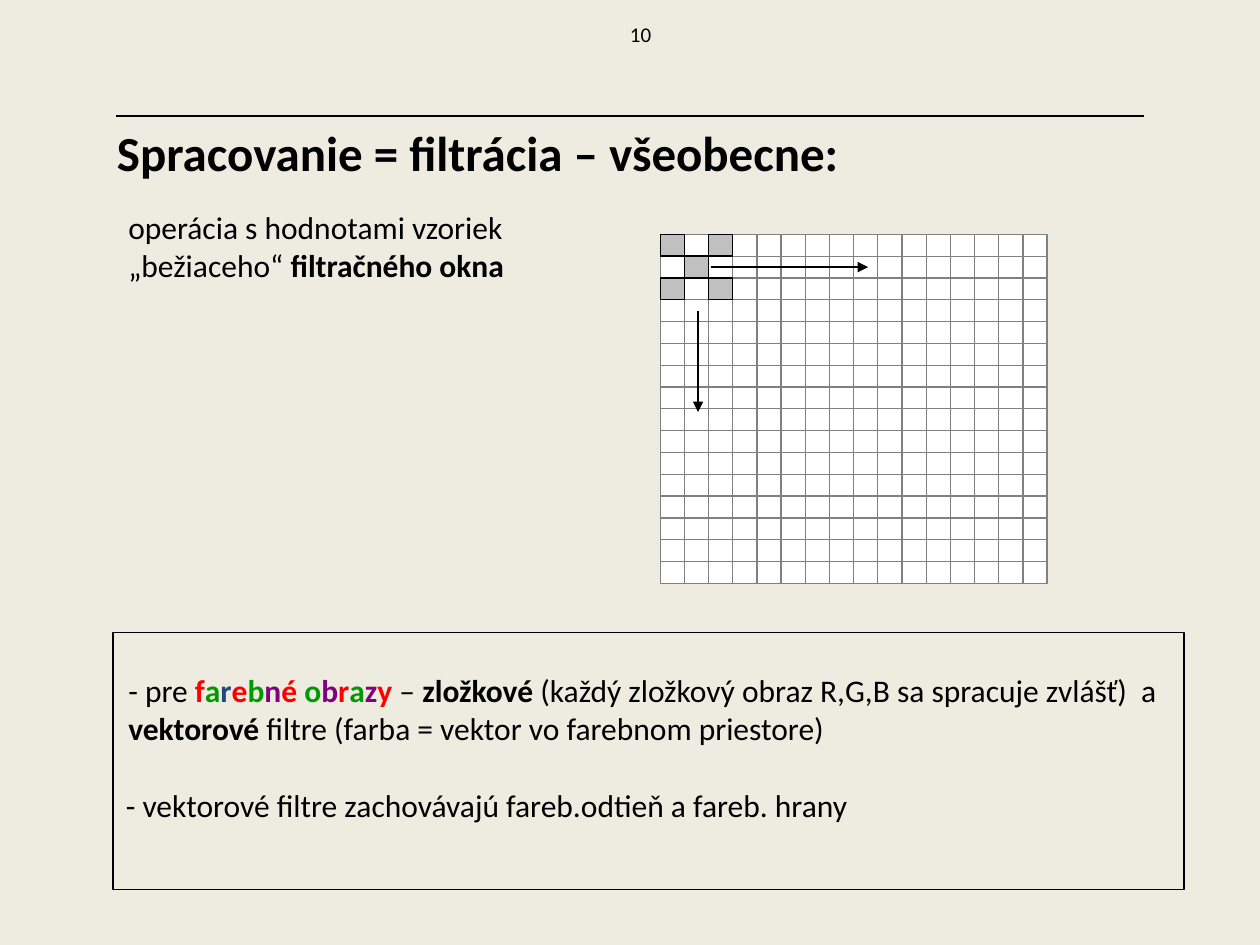
import pptx
import pptx.util
import pptx.dml.color
import pptx.enum.shapes
import pptx.enum.text
import pptx.oxml

theme = {
    "font": "Calibri", "title": 28, "body": 18, "small": 12,
    "back": "EEECE1", "ink": "000000", "white": "FFFFFF",
    "rule": "808080", "mask": "C0C0C0",
    "r": "FF0000", "g": "009900", "b": "1F497D", "p": "800080",
}

deck = pptx.Presentation()
deck.slide_width = pptx.util.Inches(10)
deck.slide_height = pptx.util.Inches(7.5)
col = deck.slide_width / 100
row = deck.slide_height / 75
page = deck.slides.add_slide(deck.slide_layouts[6])
tint = pptx.dml.color.RGBColor.from_string
rect = pptx.enum.shapes.MSO_SHAPE.RECTANGLE
page.background.fill.solid()
page.background.fill.fore_color.rgb = tint(theme["back"])


def text(runs, left, top, wide, tall, size="body", inset=1):
    box = page.shapes.add_textbox(int(left * col), int(top * row), int(wide * col), int(tall * row))
    frame = box.text_frame
    frame.word_wrap = True
    frame.auto_size = pptx.enum.text.MSO_AUTO_SIZE.SHAPE_TO_FIT_TEXT
    frame.margin_left = int(inset * col)
    for words, tone, bold in runs:
        run = frame.paragraphs[0].add_run()
        run.text = words
        run.font.name = theme["font"]
        run.font.size = pptx.util.Pt(theme[size])
        run.font.bold = bold
        run.font.color.rgb = tint(theme[tone])


def line(home, x1, y1, x2, y2, tone="ink", width=1, arrow=False):
    link = home.shapes.add_connector(
        pptx.enum.shapes.MSO_CONNECTOR.STRAIGHT,
        int(x1 * col), int(y1 * row), int(x2 * col), int(y2 * row))
    link.line.color.rgb = tint(theme[tone])
    link.line.width = pptx.util.Pt(width)
    space = pptx.oxml.ns.nsdecls("a")
    if arrow:
        link.line._get_or_add_ln().append(
            pptx.oxml.parse_xml(f'<a:tailEnd {space} type="triangle"/>'))
    link._element.spPr.append(pptx.oxml.parse_xml(f"<a:effectLst {space}/>"))
    return link


text([("Spracovanie = filtrácia – všeobecne:", "ink", True)], 8.3, 9.2, 64.5, 5.7, size="title")
line(page, 9.2, 9.2, 90.8, 9.2)
text([("operácia s hodnotami vzoriek „bežiaceho“ ", "ink", False),
      ("filtračného okna", "ink", True)], 9.2, 16, 37.7, 7.1)
text([("10", "ink", False)], 50, 1.2, 5, 3, size="small", inset=0)

count, left, top, wide, tall = 16, 52.4, 18.6, 30.7, 27.7
dx, dy = wide / count, tall / count
grid = page.shapes.add_group_shape()
spots = [(0, 0, count, "white", "rule")]
spots += [(i, j, 1, "mask", "ink") for i, j in [(0, 0), (1, 1), (2, 0), (2, 2), (0, 2)]]
for i, j, span, fill, edge in spots:
    cell = grid.shapes.add_shape(
        rect, int((left + i * dx) * col), int((top + j * dy) * row),
        int(span * dx * col), int(span * dy * row))
    cell.shadow.inherit = False
    cell.fill.solid()
    cell.fill.fore_color.rgb = tint(theme[fill])
    cell.line.color.rgb = tint(theme[edge])
    cell.line.width = pptx.util.Pt(0.75)
    if span == count:
        for n in range(1, count):
            x, y = left + n * dx, top + n * dy
            down = line(grid, x, top, x, top + tall, tone="rule", width=0.75)
            side = line(grid, left, y, left + wide, y, tone="rule", width=0.75)
            if n * 2 == count:
                down.begin_connect(cell, 0)
                down.end_connect(cell, 2)
                side.begin_connect(cell, 1)
                side.end_connect(cell, 3)
line(grid, 56.4, 21.2, 68.9, 21.2, width=1.5, arrow=True)
line(grid, 55.4, 24.7, 55.4, 32.7, width=1.5, arrow=True)

marks = ["f", "a", "r", "e", "b", "n", "é", " o", "b", "r", "a", "z", "y "]
hues = [(mark, tone, True) for mark, tone in zip(marks, "rgbrgprgprgpr")]
text([("- pre ", "ink", False), *hues,
      ("– ", "ink", False), ("zložkové ", "ink", True),
      ("(každý zložkový obraz R,G,B sa spracuje zvlášť)  a ", "ink", False),
      ("vektorové ", "ink", True),
      ("filtre (farba = vektor vo farebnom priestore)", "ink", False)], 9.2, 52.8, 86.7, 7.1)
text([("- vektorové filtre zachovávajú fareb.odtieň a fareb. hrany", "ink", False)],
     9, 61.9, 84.2, 5)

frame = page.shapes.add_shape(rect, int(9 * col), int(50.2 * row), int(85 * col), int(20.4 * row))
frame.shadow.inherit = False
frame.fill.background()
frame.line.color.rgb = tint(theme["ink"])
frame.line.width = pptx.util.Pt(1)

deck.save("out.pptx")
